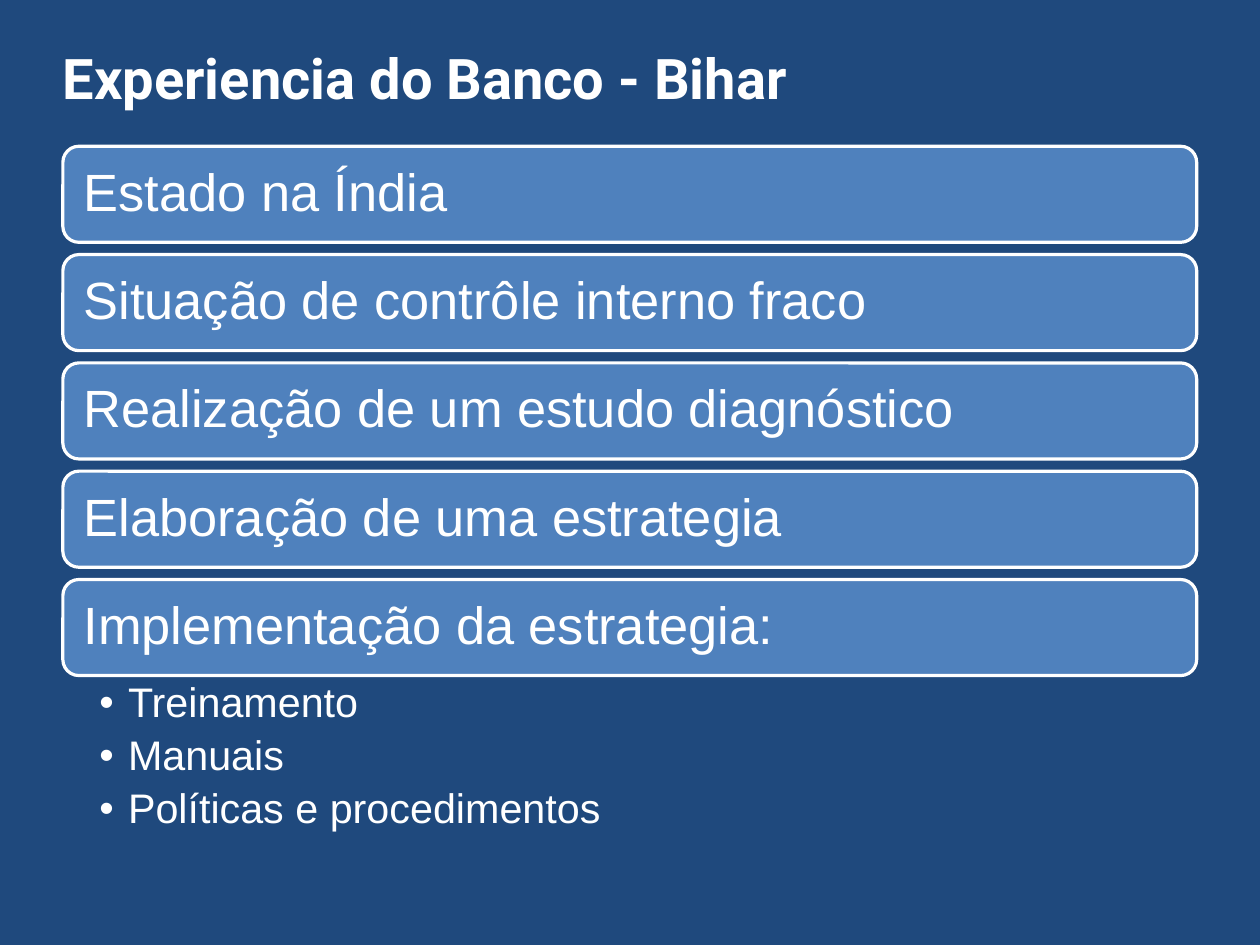
from lxml import etree
from pptx import Presentation
from pptx.dml.color import RGBColor
from pptx.enum import shapes, text
from pptx.oxml import ns
from pptx.util import Inches, Pt

NAVY = RGBColor(0x1F, 0x49, 0x7D)
BLUE = RGBColor(0x4F, 0x81, 0xBD)
WHITE = RGBColor(0xFF, 0xFF, 0xFF)

STEPS = [
    "Estado na Índia",
    "Situação de contrôle interno fraco",
    "Realização de um estudo diagnóstico",
    "Elaboração de uma estrategia",
    "Implementação da estrategia:",
]
ACTIONS = ["Treinamento", "Manuais", "Políticas e procedimentos"]

LEFT, WIDTH = Inches(0.55), Inches(9.92)
FIRST_TOP, LAST_TOP, BAR_HEIGHT = 1.28, 5.07, 0.84
BAR_PITCH = (LAST_TOP - FIRST_TOP) / (len(STEPS) - 1)


def set_frame(frame, anchor, left, top, right, bottom):
    """Wrap the text, anchor it and set its margins in inches."""
    frame.word_wrap = True
    frame.vertical_anchor = anchor
    frame.margin_left, frame.margin_top = Inches(left), Inches(top)
    frame.margin_right, frame.margin_bottom = Inches(right), Inches(bottom)


def write(para, words, size, font="Arial", bold=False):
    para.text = words
    para.alignment = text.PP_ALIGN.LEFT
    para.line_spacing = 0.9
    para.font.name = font
    para.font.size = Pt(size)
    para.font.bold = bold
    para.font.color.rgb = WHITE


deck = Presentation()
deck.slide_width, deck.slide_height = Inches(11.024), Inches(8.267)
page = deck.slides.add_slide(deck.slide_layouts[6])
page.background.fill.solid()
page.background.fill.fore_color.rgb = NAVY

for row, step in enumerate(STEPS):
    bar = page.shapes.add_shape(
        shapes.MSO_SHAPE.ROUNDED_RECTANGLE,
        LEFT, Inches(FIRST_TOP + row * BAR_PITCH), WIDTH, Inches(BAR_HEIGHT))
    bar.shadow.inherit = False
    bar.fill.solid()
    bar.fill.fore_color.rgb = BLUE
    bar.line.color.rgb = WHITE
    bar.line.width = Pt(2)
    set_frame(bar.text_frame, text.MSO_ANCHOR.MIDDLE, 0.14, 0.14, 0.14, 0.14)
    write(bar.text_frame.paragraphs[0], step, 33)

actions = page.shapes.add_textbox(LEFT, Inches(5.92), WIDTH, Inches(1.38))
set_frame(actions.text_frame, text.MSO_ANCHOR.TOP, 0.32, 0.05, 0.26, 0.05)
for row, action in enumerate(ACTIONS):
    para = actions.text_frame.add_paragraph() if row else actions.text_frame.paragraphs[0]
    write(para, action, 26)
    para.space_after = Pt(5.2)
    props = para._p.get_or_add_pPr()
    props.set("marL", str(Inches(0.25)))
    props.set("indent", str(-Inches(0.25)))
    bullet_font = etree.Element(ns.qn("a:buFont"), typeface="Arial")
    bullet = etree.Element(ns.qn("a:buChar"), char="•")
    props.find(ns.qn("a:spcAft")).addnext(bullet_font)
    bullet_font.addnext(bullet)

title = page.shapes.add_textbox(LEFT, Inches(0.33), WIDTH, Inches(0.77))
set_frame(title.text_frame, text.MSO_ANCHOR.MIDDLE, 0, 0, 0, 0)
write(title.text_frame.paragraphs[0], "Experiencia do Banco - Bihar", 35.3, "Roboto", True)

deck.save("out.pptx")
